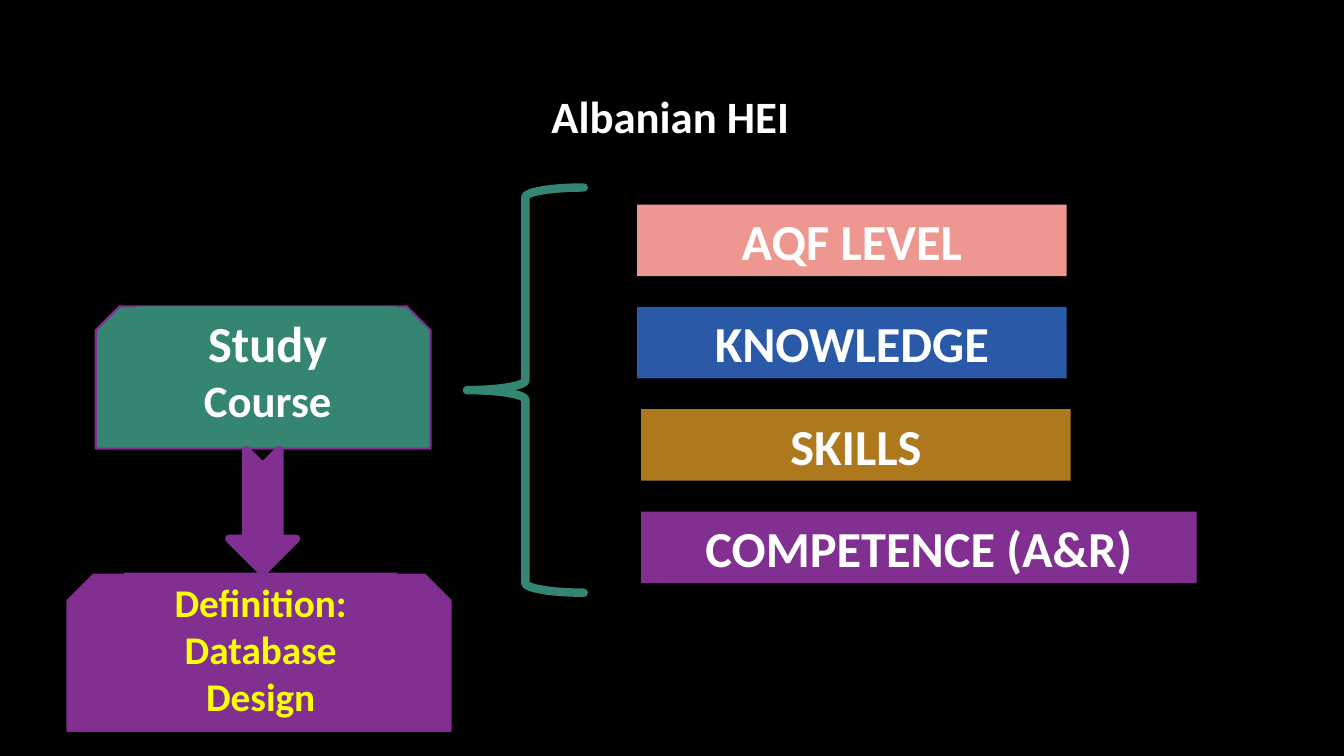
from pptx import Presentation
from pptx.dml.color import RGBColor
from pptx.enum.shapes import MSO_SHAPE
from pptx.enum.text import MSO_ANCHOR, PP_ALIGN
from pptx.oxml.ns import qn
from pptx.util import Inches, Pt
from lxml.etree import SubElement

BLACK = RGBColor(0x00, 0x00, 0x00)
WHITE = RGBColor(0xFF, 0xFF, 0xFF)
YELLOW = RGBColor(0xFF, 0xFF, 0x00)
GREEN = RGBColor(0x34, 0x86, 0x72)
PURPLE = RGBColor(0x81, 0x2F, 0x91)
EDGE = RGBColor(0x7F, 0x2E, 0x8F)
PINK = RGBColor(0xEE, 0x97, 0x91)
BLUE = RGBColor(0x2A, 0x59, 0xA8)
OCHRE = RGBColor(0xAE, 0x78, 0x1D)

TITLE = "Albanian HEI"
BARS = [
    ("AQF LEVEL", PINK, 6.32, 4.26),
    ("KNOWLEDGE", BLUE, 6.32, 4.26),
    ("SKILLS", OCHRE, 6.36, 4.26),
    ("COMPETENCE (A&R)", PURPLE, 6.36, 5.51),
]
BAR_TOP, BAR_STEP, BAR_HEIGHT = 2.03, 1.015, 0.71
CARDS = [
    ([("Study", 36), ("Course", 32)], GREEN, WHITE,
     (0.95, 3.04, 3.32, 1.41), (1.36, 3.04, 2.59, 1.25)),
    ([("Definition:", 28), ("Database Design", 28)], PURPLE, YELLOW,
     (0.67, 5.7, 3.8, 1.55), (1.23, 5.68, 2.71, 1.51)),
]
BRACE = (4.63, 1.86, 1.16, 4.02)
ARROW = (2, 4.74, 1.21, 0.66)


def write(shape, lines, color=WHITE):
    frame = shape.text_frame
    frame.word_wrap = True
    frame.vertical_anchor = MSO_ANCHOR.MIDDLE
    for index, (text, size) in enumerate(lines):
        para = frame.add_paragraph() if index else frame.paragraphs[0]
        para.alignment = PP_ALIGN.CENTER
        span = para.add_run()
        span.text = text
        span.font.name = "Calibri"
        span.font.size = Pt(size)
        span.font.bold = True
        span.font.color.rgb = color


def add_box(shapes, kind, place, fill=None, line=None, width=1.5, rotation=0):
    box = shapes.add_shape(kind, *map(Inches, place))
    box.shadow.inherit = False
    box.rotation = rotation
    if fill is None:
        box.fill.background()
    else:
        box.fill.solid()
        box.fill.fore_color.rgb = fill
    if line is None:
        box.line.fill.background()
    else:
        box.line.color.rgb = line
        box.line.width = Pt(width)
    return box


def round_line(box):
    outline = box.line._get_or_add_ln()
    outline.set("cap", "rnd")
    SubElement(outline, qn("a:round"))


def main():
    deck = Presentation()
    deck.slide_width, deck.slide_height = Inches(13.33), Inches(7.5)
    page = deck.slides.add_slide(deck.slide_layouts[5])
    page.background.fill.solid()
    page.background.fill.fore_color.rgb = BLACK

    title = page.shapes.title
    title.left, title.top, title.width, title.height = map(Inches, (4.47, 0.83, 4.36, 0.64))
    write(title, [(TITLE, 32)])

    for lines, fill, ink, outer, inner in CARDS:
        card = page.shapes.add_group_shape()
        add_box(card.shapes, MSO_SHAPE.SNIP_2_SAME_RECTANGLE, outer, fill, EDGE)
        write(add_box(card.shapes, MSO_SHAPE.RECTANGLE, inner, fill), lines, ink)

    for row, (text, fill, left, width) in enumerate(BARS):
        place = (left, BAR_TOP + row * BAR_STEP, width, BAR_HEIGHT)
        write(add_box(page.shapes, MSO_SHAPE.RECTANGLE, place, fill), [(text, 36)])

    round_line(add_box(page.shapes, MSO_SHAPE.RIGHT_BRACE, BRACE,
                       line=GREEN, width=6, rotation=180))
    round_line(add_box(page.shapes, MSO_SHAPE.NOTCHED_RIGHT_ARROW, ARROW,
                       PURPLE, PURPLE, width=6, rotation=90))
    deck.save("out.pptx")


if __name__ == "__main__":
    main()
